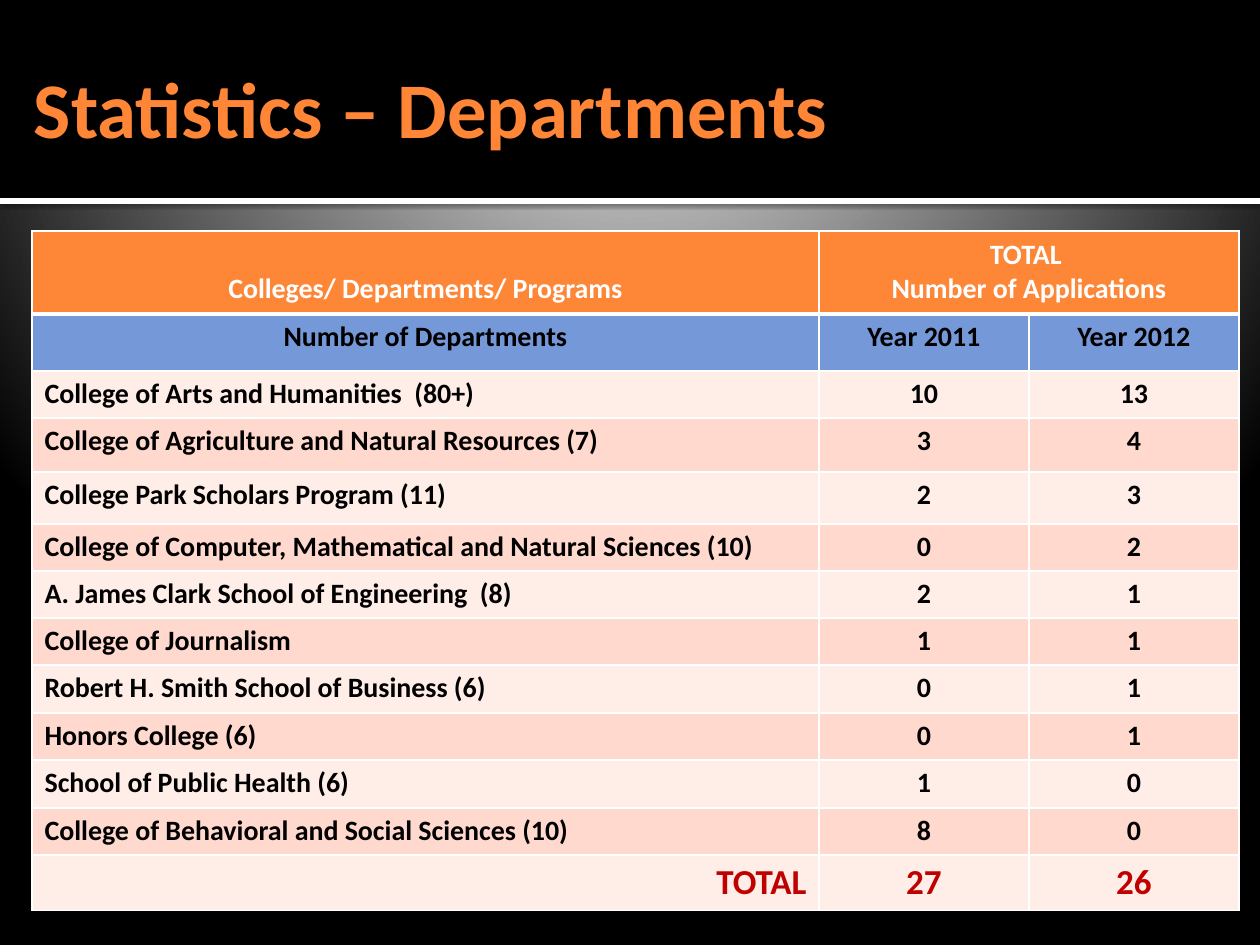
"""Build the slide of application statistics by department."""
from lxml import etree
from pptx import Presentation, util as u
from pptx.dml.color import RGBColor
from pptx.enum import shapes, text
from pptx.oxml import parse_xml
from pptx.oxml.ns import qn

PX = 914400 // 126
FONT = "Calibri"
HUES = {"white": "FFFFFF", "black": "000000", "title": "FF8636", "head": "FE8637",
        "blue": "7598D9", "light": "FFEDE8", "dark": "FFD9CE", "red": "C00000"}
TITLE = "Statistics – Departments"
HEAD = ["Colleges/ Departments/ Programs", "TOTAL \nNumber of Applications", ""]
YEARS = ["Number of Departments", "Year 2011", "Year 2012"]
BODY = [
    ("College of Arts and Humanities  (80+)", 10, 13),
    ("College of Agriculture and Natural Resources (7)", 3, 4),
    ("College Park Scholars Program (11)", 2, 3),
    ("College of Computer, Mathematical and Natural Sciences (10)", 0, 2),
    ("A. James Clark School of Engineering  (8)", 2, 1),
    ("College of Journalism", 1, 1),
    ("Robert H. Smith School of Business (6)", 0, 1),
    ("Honors College (6)", 0, 1),
    ("School of Public Health (6)", 1, 0),
    ("College of Behavioral and Social Sciences (10)", 8, 0),
]
SUMS = ["TOTAL", 27, 26]
COLS = [787, 210, 210]
ROWS = [83, 57, 47, 54, 52, 47, 47, 47, 48, 47, 48, 47, 56]
STOPS = [(0, "C0C0C0"), (12, "C0C0C0"), (20, "BEBEBE"), (100, "000000")]
SPACE = 'xmlns:a="http://schemas.openxmlformats.org/drawingml/2006/main"'
ALIGN = text.PP_ALIGN


def px(*nums):
    return [u.Emu(n * PX) for n in nums]


def paint(fill, hue):
    fill.solid()
    fill.fore_color.rgb = RGBColor.from_string(HUES[hue])


def write(frame, words, size, hue, align):
    for i, line in enumerate(str(words).split("\n")):
        para = frame.paragraphs[0] if i == 0 else frame.add_paragraph()
        para.alignment = align
        run = para.add_run()
        run.text = line
        run.font.name, run.font.size, run.font.bold = FONT, u.Pt(size), True
        run.font.color.rgb = RGBColor.from_string(HUES[hue])


def backdrop(slide):
    slide.background.fill.solid()
    old = slide.background.fill._xPr.find(qn("a:solidFill"))
    stops = "".join(f'<a:gs pos="{at * 1000}"><a:srgbClr val="{hue}"/></a:gs>'
                    for at, hue in STOPS)
    new = parse_xml(f'<a:gradFill {SPACE} rotWithShape="1"><a:gsLst>{stops}</a:gsLst>'
                    '<a:path path="circle"><a:fillToRect l="10000" t="-25000" '
                    'r="10000" b="125000"/></a:path></a:gradFill>')
    old.getparent().replace(old, new)


def band(slide, top, high, hue):
    box = slide.shapes.add_shape(shapes.MSO_SHAPE.RECTANGLE, *px(0, top, 1260, high))
    box.shadow.inherit = False
    paint(box.fill, hue)
    box.line.fill.background()
    return box


def shade(box):
    glow = box._element.spPr.find(qn("a:effectLst"))
    glow.append(parse_xml(
        f'<a:outerShdw {SPACE} blurRad="{u.Pt(2.5)}" dist="{u.Pt(0.8)}" dir="5400000">'
        '<a:srgbClr val="000000"><a:alpha val="60000"/></a:srgbClr></a:outerShdw>'))


def edge(cell, row):
    wide = {"lnT": 3 if row == 1 else 1, "lnB": 3 if row == 0 else 1}
    props = cell._tc.get_or_add_tcPr()
    for i, side in enumerate(("lnL", "lnR", "lnT", "lnB")):
        line = etree.Element(qn("a:" + side), w=str(u.Pt(wide.get(side, 1))))
        fill = etree.SubElement(line, qn("a:solidFill"))
        etree.SubElement(fill, qn("a:srgbClr"), val=HUES["white"])
        props.insert(i, line)


def style(row):
    if row == 0:
        return "head", "white", 16
    if row == 1:
        return "blue", "black", 16
    fill = "dark" if row % 2 else "light"
    return (fill, "red", 20) if row == len(ROWS) - 1 else (fill, "black", 16)


def grid(slide):
    data = [HEAD, YEARS, *BODY, SUMS]
    place = px(32, 231, sum(COLS), sum(ROWS))
    table = slide.shapes.add_table(len(ROWS), len(COLS), *place).table
    table.first_row = table.horz_banding = False
    for col, wide in zip(table.columns, px(*COLS)):
        col.width = wide
    for row, high in zip(table.rows, px(*ROWS)):
        row.height = high
    table.cell(0, 1).merge(table.cell(0, 2))
    for r, items in enumerate(data):
        fill, hue, size = style(r)
        for c, words in enumerate(items):
            cell = table.cell(r, c)
            paint(cell.fill, fill)
            edge(cell, r)
            align = ALIGN.CENTER
            if c == 0 and r > 1:
                align = ALIGN.RIGHT if r == len(ROWS) - 1 else ALIGN.LEFT
            if words != "":
                write(cell.text_frame, words, size, hue, align)
    first = table.cell(0, 0)
    first.vertical_anchor = text.MSO_ANCHOR.BOTTOM
    first.margin_bottom = px(8)[0]


def title(slide):
    frame = slide.shapes.add_textbox(*px(21, 21, 1229, 173)).text_frame
    frame.word_wrap = True
    frame.vertical_anchor = text.MSO_ANCHOR.MIDDLE
    frame.margin_left, frame.margin_right = px(13, 6)
    write(frame, TITLE, 45, "title", ALIGN.LEFT)


def main():
    deck = Presentation()
    deck.slide_width, deck.slide_height = px(1260, 945)
    slide = deck.slides.add_slide(deck.slide_layouts[6])
    backdrop(slide)
    shade(band(slide, 198, 6, "white"))
    band(slide, 0, 198, "black")
    grid(slide)
    title(slide)
    deck.save("out.pptx")


if __name__ == "__main__":
    main()
